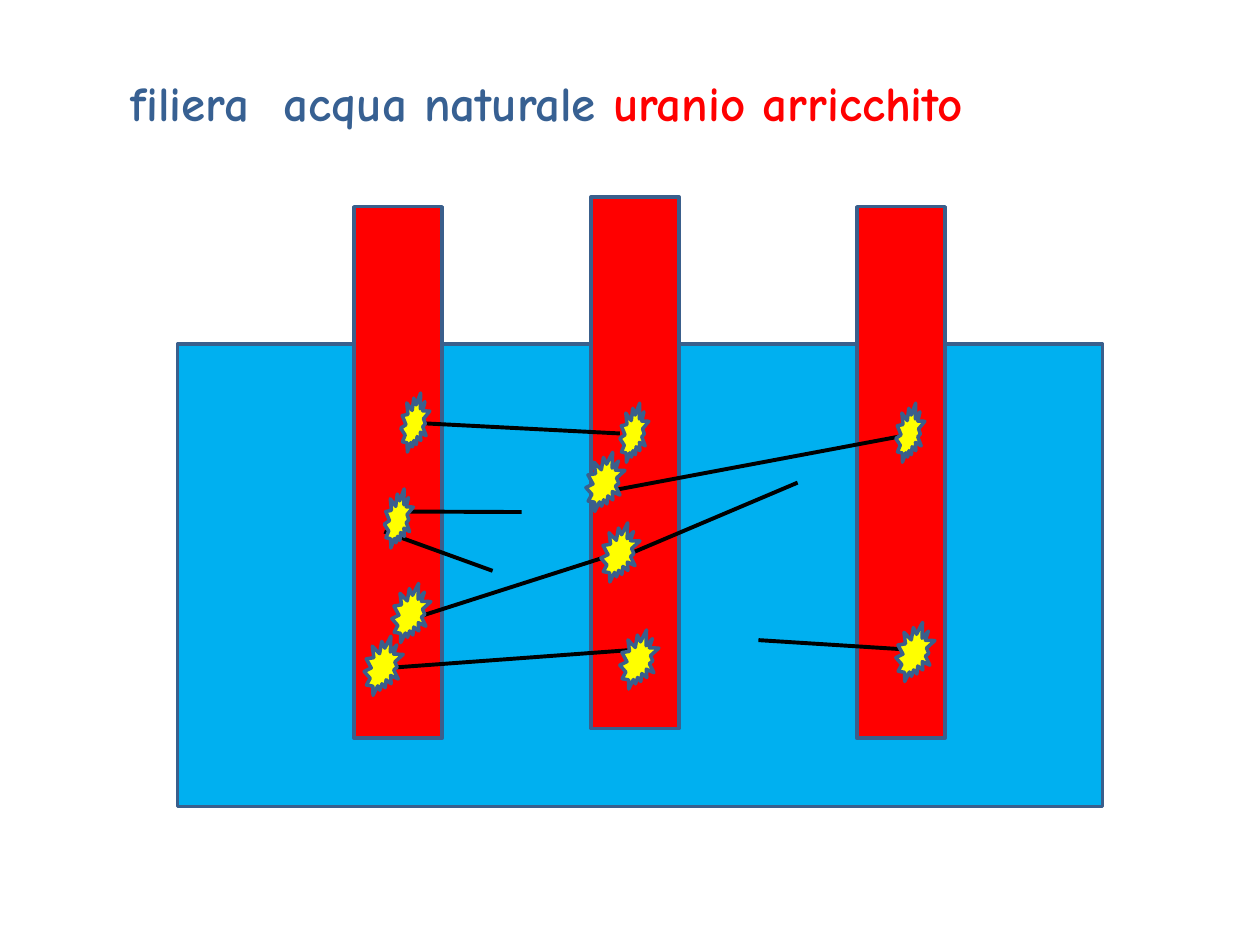
from dataclasses import dataclass

from lxml.etree import SubElement
from pptx import Presentation
from pptx.dml.color import RGBColor
from pptx.enum.shapes import MSO_CONNECTOR as Connector, MSO_SHAPE as Shape
from pptx.enum.text import MSO_ANCHOR as Anchor
from pptx.oxml.ns import qn
from pptx.util import Pt


@dataclass(frozen=True)
class Theme:
    font: str = "Comic Neue"
    title_size: float = 28
    outline_width: float = 2
    path_width: float = 2.25
    title: str = "376092"
    outline: str = "3A5F8C"
    water: str = "00B0F0"
    uranium: str = "FF0000"
    fission: str = "FFFF00"
    neutron: str = "000000"


class ReactorSlide:
    def __init__(self, slide, theme):
        self.shapes = slide.shapes
        self.theme = theme

    def block(self, kind, left, top, width, height, color):
        block = self.shapes.add_shape(kind, Pt(left), Pt(top), Pt(width), Pt(height))
        block.shadow.inherit = False
        block.fill.solid()
        block.fill.fore_color.rgb = RGBColor.from_string(color)
        block.line.color.rgb = RGBColor.from_string(self.theme.outline)
        block.line.width = Pt(self.theme.outline_width)

    def neutron_path(self, start, end):
        path = self.shapes.add_connector(
            Connector.STRAIGHT, *(Pt(value) for value in (*start, *end)))
        path.line.color.rgb = RGBColor.from_string(self.theme.neutron)
        path.line.width = Pt(self.theme.path_width)
        SubElement(path._element.spPr, qn("a:effectLst"))

    def title(self, left, top, width, height, parts):
        frame = self.shapes.add_textbox(
            Pt(left), Pt(top), Pt(width), Pt(height)).text_frame
        frame.word_wrap = True
        frame.vertical_anchor = Anchor.BOTTOM
        heading = frame.paragraphs[0]
        heading.font.name = self.theme.font
        heading.font.size = Pt(self.theme.title_size)
        heading.font.bold = True
        for text, color in parts:
            run = heading.add_run()
            run.text = text
            run.font.color.rgb = RGBColor.from_string(color)


ROD_WIDTH, ROD_HEIGHT = 50.4, 303.8
RODS = [(489.6, 118.1), (337.7, 112.5), (202.3, 118.1)]

NEUTRON_PATHS = [
    ((241.9, 241.9), (354.2, 247.7)),
    ((224.6, 292.3), (298.1, 292.6)),
    ((219.6, 303.8), (281.5, 326.2)),
    ((229, 355.7), (348.5, 317.5)),
    ((213.8, 382.3), (360, 371.5)),
    ((343.4, 281.5), (523.4, 247.7)),
    ((360.7, 316.1), (455.8, 275.8)),
    ((433.4, 365.8), (523.4, 371.5)),
]

SPARK_HEIGHT = 33.8
NARROW, WIDE = 16.6, 22.3
FISSIONS = {
    NARROW: [(354.2, 230.4), (511.9, 230.4), (229, 224.6), (219.6, 279.4)],
    WIDE: [(354.2, 360), (208.1, 363.6), (343.4, 298.8), (334.8, 258.5),
           (511.9, 355.7), (223.9, 333.4)],
}


def main():
    presentation = Presentation()
    presentation.slide_width, presentation.slide_height = Pt(720), Pt(540)
    theme = Theme()
    blank = presentation.slide_layouts[6]
    reactor = ReactorSlide(presentation.slides.add_slide(blank), theme)

    reactor.block(Shape.RECTANGLE, 101.5, 196.6, 528.5, 264.2, theme.water)
    for left, top in RODS:
        reactor.block(Shape.RECTANGLE, left, top, ROD_WIDTH, ROD_HEIGHT, theme.uranium)
    reactor.title(67.7, 3.6, 576, 74.9, [
        ("filiera  acqua naturale ", theme.title),
        ("uranio arricchito", theme.uranium),
    ])
    for start, end in NEUTRON_PATHS:
        reactor.neutron_path(start, end)
    for width, corners in FISSIONS.items():
        for left, top in corners:
            reactor.block(Shape.EXPLOSION2, left, top, width, SPARK_HEIGHT, theme.fission)

    presentation.save("out.pptx")


if __name__ == "__main__":
    main()
